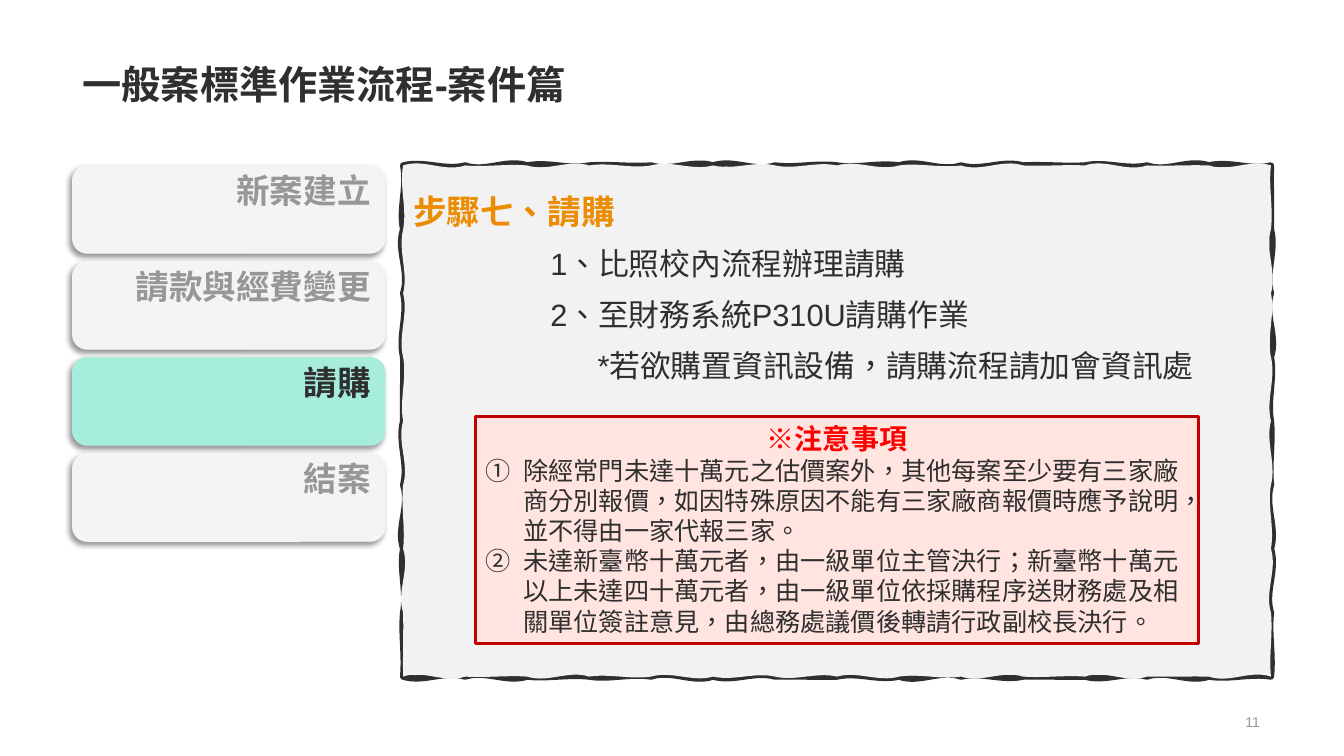
from copy import deepcopy
from dataclasses import dataclass
from math import sin

from lxml.etree import SubElement
from pptx import Presentation
from pptx.dml.color import RGBColor
from pptx.enum.lang import MSO_LANGUAGE_ID
from pptx.enum.shapes import MSO_SHAPE
from pptx.enum.text import MSO_ANCHOR, MSO_AUTO_SIZE, PP_ALIGN
from pptx.oxml.ns import qn
from pptx.util import Cm, Pt

LEFT, MID, RIGHT = PP_ALIGN.LEFT, PP_ALIGN.CENTER, PP_ALIGN.RIGHT
TOP, CENTER, BOTTOM = MSO_ANCHOR.TOP, MSO_ANCHOR.MIDDLE, MSO_ANCHOR.BOTTOM
RECT, ROUND = MSO_SHAPE.RECTANGLE, MSO_SHAPE.ROUNDED_RECTANGLE
FIXED = MSO_AUTO_SIZE.NONE
TAIWAN = MSO_LANGUAGE_ID.TRADITIONAL_CHINESE
LATIN, HAN = "Arial", "Noto Sans CJK SC"
INK, GREY, PALE, MINT = "2F2F2F", "979797", "F4F4F4", "A6EDDC"


@dataclass
class Box:
    """A place on the slide in centimetres."""
    x: float
    y: float
    w: float
    h: float

    def size(self) -> tuple:
        """Return left, top, width and height as lengths."""
        return Cm(self.x), Cm(self.y), Cm(self.w), Cm(self.h)


@dataclass
class Line:
    """A paragraph with its look."""
    text: str
    size: float
    color: str = INK
    bold: bool = False
    font: str = LATIN
    align: PP_ALIGN = LEFT
    gap: float = 0
    lead: float = 1.0
    left: float = 0
    hang: float = 0
    mark: str = ""


@dataclass
class Card:
    """A stage of the process."""
    text: str
    fill: str = PALE
    color: str = GREY


def paint(target, code: str) -> None:
    """Set a solid colour on a fill."""
    target.solid()
    target.fore_color.rgb = RGBColor.from_string(code)


def write(shape, lines: list[Line], anchor: MSO_ANCHOR = TOP) -> None:
    """Fill a shape with formatted paragraphs."""
    frame = shape.text_frame
    frame.word_wrap = True
    frame.auto_size = FIXED
    frame.vertical_anchor = anchor
    for i, line in enumerate(lines):
        para = frame.paragraphs[0] if i == 0 else frame.add_paragraph()
        para.alignment = line.align
        para.line_spacing = line.lead
        para.space_before, para.space_after = Pt(line.gap), Pt(0)
        props = para._p.get_or_add_pPr()
        props.set("marL", str(Cm(line.left)))
        props.set("indent", str(Cm(line.hang)))
        if line.mark:
            SubElement(props, qn("a:buAutoNum"), type=line.mark)
        else:
            SubElement(props, qn("a:buNone"))
        run = para.add_run()
        run.text = line.text
        font = run.font
        font.name, font.size, font.bold = line.font, Pt(line.size), line.bold
        font.language_id = TAIWAN
        paint(font.fill, line.color)


def style(shape, fill: str, edge: str, width: float) -> None:
    """Set the fill and outline of a shape without shadow."""
    shape.shadow.inherit = False
    paint(shape.fill, fill)
    paint(shape.line.fill, edge)
    shape.line.width = Pt(width)


def shade(shape) -> None:
    """Give a shape a soft shadow to its lower left."""
    effects = shape._element.spPr.find(qn("a:effectLst"))
    outer = SubElement(effects, qn("a:outerShdw"), blurRad=str(Pt(4)),
                       dist=str(Pt(3)), dir="8100000", algn="tr", rotWithShape="0")
    tint = SubElement(outer, qn("a:srgbClr"), val="000000")
    SubElement(tint, qn("a:alpha"), val="40000")


def bend(track, seed: float) -> None:
    """Turn the straight segments of a path into shaky curves."""
    spots = [(int(p.get("x")), int(p.get("y"))) for p in track.iter(qn("a:pt"))]
    for i, old in enumerate(track.findall(qn("a:lnTo"))):
        (x, y), (u, v) = spots[i], spots[i + 1]
        wave = Cm(0.18) * sin(seed * (i + 1))
        across, down = (0, wave) if y == v else (wave, 0)
        curve = SubElement(track, qn("a:cubicBezTo"))
        for part, sign in ((1 / 3, -1), (2 / 3, 1), (1, 0)):
            SubElement(curve, qn("a:pt"), x=str(round(x + part * (u - x) + sign * across)),
                       y=str(round(y + part * (v - y) + sign * down)))
        track.replace(old, curve)


def rough(shapes, box: Box, cols: int, rows: int):
    """Draw a rectangle with hand-drawn sides, edge and fill apart."""
    x, y, w, h = box.size()
    dots = [(x + w * i / cols, y) for i in range(cols)]
    dots += [(x + w, y + h * i / rows) for i in range(rows)]
    dots += [(x + w - w * i / cols, y + h) for i in range(cols)]
    dots += [(x, y + h - h * i / rows) for i in range(rows)]
    pen = shapes.build_freeform(*dots[0])
    pen.add_line_segments(dots[1:] + dots[:1], close=True)
    shape = pen.convert_to_shape()
    edge = shape._element.spPr.find(".//" + qn("a:path"))
    sheet = deepcopy(edge)
    edge.addnext(sheet)
    edge.set("fill", "none")
    sheet.set("stroke", "0")
    bend(edge, 2.3)
    bend(sheet, 1.7)
    return shape


def main() -> None:
    """Build the slide and save it."""
    deck = Presentation()
    deck.slide_width, deck.slide_height = Cm(33.87), Cm(19.05)
    slide = deck.slides.add_slide(deck.slide_layouts[5])
    shapes = slide.shapes

    title = shapes.title
    title.left, title.top, title.width, title.height = Box(1.83, 0, 30.18, 2.84).size()
    write(title, [Line("一般案標準作業流程-案件篇", 28, bold=True, lead=0.9)], BOTTOM)

    page = shapes.add_textbox(*Box(24.61, 17.88, 7.39, 0.61).size())
    write(page, [Line("11", 10, GREY, align=RIGHT)], CENTER)

    panel = rough(shapes, Box(10.16, 4.17, 21.87, 12.88), 14, 8)
    style(panel, "F2F2F2", INK, 4.5)
    steps = [("1、比照校內流程辦理請購", -1.19), ("2、至財務系統P310U請購作業", -1.19),
             ("*若欲購置資訊設備，請購流程請加會資訊處", 0)]
    write(panel, [Line("步驟七、請購", 24, "EB8C02", True, HAN, lead=1.5)]
          + [Line(text, 22, gap=10, left=4.65, hang=hang) for text, hang in steps])

    cards = [Card("新案建立"), Card("請款與經費變更"), Card("請購", MINT, INK), Card("結案")]
    for i, card in enumerate(cards):
        place = Box(1.83, 4.17 + 2.42 * i, 7.87, 2.21)
        shape = shapes.add_shape(ROUND, *place.size())
        style(shape, card.fill, card.fill, 0.75)
        shade(shape)
        write(shape, [Line(card.text, 24, card.color, True, align=RIGHT, lead=0.9)])

    rules = ["除經常門未達十萬元之估價案外，其他每案至少要有三家廠商分別報價，"
             "如因特殊原因不能有三家廠商報價時應予說明，並不得由一家代報三家。",
             "未達新臺幣十萬元者，由一級單位主管決行；新臺幣十萬元以上未達四十萬元者，"
             "由一級單位依採購程序送財務處及相關單位簽註意見，由總務處議價後轉請行政副校長決行。"]
    note = shapes.add_shape(RECT, *Box(11.99, 10.49, 18.21, 5.73).size())
    style(note, "FFE4E0", "C00000", 2.25)
    write(note, [Line("※注意事項", 20, "FF0000", True, HAN, MID)]
          + [Line(rule, 18, font=HAN, left=0.95, hang=-0.95, mark="circleNumWdWhitePlain")
             for rule in rules])
    deck.save("out.pptx")


if __name__ == "__main__":
    main()
